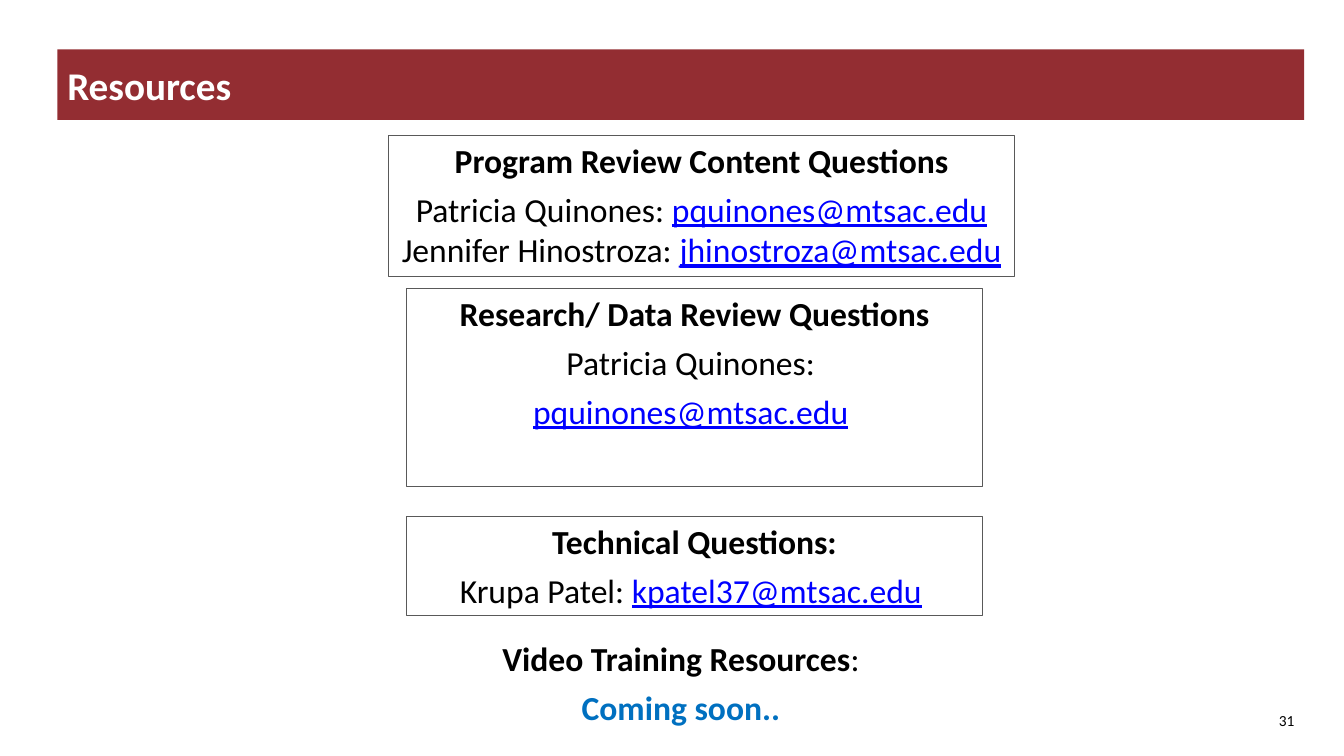
from pptx import Presentation
from pptx.dml.color import RGBColor
from pptx.enum.shapes import MSO_SHAPE
from pptx.enum.text import MSO_ANCHOR, PP_ALIGN
from pptx.util import Pt

RECTANGLE = MSO_SHAPE.RECTANGLE
TOP, MIDDLE = MSO_ANCHOR.TOP, MSO_ANCHOR.MIDDLE
LEFT, CENTER, RIGHT = PP_ALIGN.LEFT, PP_ALIGN.CENTER, PP_ALIGN.RIGHT

PLAIN = {"color": "000000"}
BOLD = {"color": "000000", "bold": True}
ADDRESS = {"color": "0000FF", "underline": True}
SOON = {"color": "0070C0", "bold": True}
TITLE = {"color": "FFFFFF", "bold": True}


def color(value):
    return RGBColor.from_string(value)


class SlideBuilder:
    font_name = "Calibri"
    body_size = 24
    frame_color = "595959"
    banner_color = "932D32"

    def __init__(self, slide):
        self.slide = slide

    def add_text(self, shape, paragraphs, size, align, anchor=TOP, space_after=0):
        frame = shape.text_frame
        frame.word_wrap = True
        frame.vertical_anchor = anchor
        for index, runs in enumerate(paragraphs):
            paragraph = frame.paragraphs[0] if index == 0 else frame.add_paragraph()
            layout = {"alignment": align, "space_after": Pt(space_after)}
            for name, value in layout.items():
                setattr(paragraph, name, value)
            for text, style in runs:
                self.add_run(paragraph, text, size, style)

    def add_run(self, paragraph, text, size, style):
        run = paragraph.add_run()
        run.text = text
        values = {"name": self.font_name, "size": Pt(size), "bold": False, **style}
        run.font.color.rgb = color(values.pop("color"))
        for name, value in values.items():
            setattr(run.font, name, value)

    def rectangle(self, bounds):
        shape = self.slide.shapes.add_shape(RECTANGLE, *map(Pt, bounds))
        shape.shadow.inherit = False
        return shape

    def banner(self, bounds, text):
        shape = self.rectangle(bounds)
        shape.fill.solid()
        shape.fill.fore_color.rgb = color(self.banner_color)
        shape.line.fill.background()
        self.add_text(shape, [[(text, TITLE)]], 28, LEFT, MIDDLE)

    def framed_box(self, bounds, paragraphs):
        shape = self.rectangle(bounds)
        shape.fill.background()
        shape.line.color.rgb = color(self.frame_color)
        shape.line.width = Pt(0.75)
        self.add_text(shape, paragraphs, self.body_size, CENTER, space_after=6)

    def text_box(self, bounds, paragraphs, size, align, anchor=TOP, space_after=0):
        shape = self.slide.shapes.add_textbox(*map(Pt, bounds))
        self.add_text(shape, paragraphs, size, align, anchor, space_after)


def main():
    presentation = Presentation()
    presentation.slide_width = Pt(960)
    presentation.slide_height = Pt(540)
    builder = SlideBuilder(presentation.slides.add_slide(presentation.slide_layouts[6]))

    builder.banner((41, 35.3, 890.6, 50.4), "Resources")

    contact_boxes = [
        ((277.2, 96.5, 447.8, 100.8), [
            [("Program Review Content Questions", BOLD)],
            [
                ("Patricia Quinones: ", PLAIN),
                ("pquinones@mtsac.edu", ADDRESS),
                (" Jennifer Hinostroza: ", PLAIN),
                ("jhinostroza@mtsac.edu", ADDRESS),
                (" ", PLAIN),
            ],
        ]),
        ((290.2, 206, 411.8, 141.8), [
            [("Research/ Data Review Questions", BOLD)],
            [("Patricia Quinones: ", PLAIN)],
            [("pquinones@mtsac.edu", ADDRESS), (" ", PLAIN)],
        ]),
        ((290.2, 368.6, 411.8, 71.3), [
            [("Technical Questions:", BOLD)],
            [
                ("Krupa Patel: ", PLAIN),
                ("kpatel37@mtsac.edu", ADDRESS),
                (" ", PLAIN),
            ],
        ]),
    ]
    for bounds, paragraphs in contact_boxes:
        builder.framed_box(bounds, paragraphs)

    training = [
        [("Video Training Resources", BOLD), (":", PLAIN)],
        [("Coming soon..", SOON)],
    ]
    builder.text_box((341.3, 452.2, 290.2, 71.3), training, 24, CENTER, space_after=6)
    builder.text_box((673.9, 500.4, 257.8, 28.8), [[("31", PLAIN)]], 11, RIGHT, MIDDLE)

    presentation.save("out.pptx")


if __name__ == "__main__":
    main()
